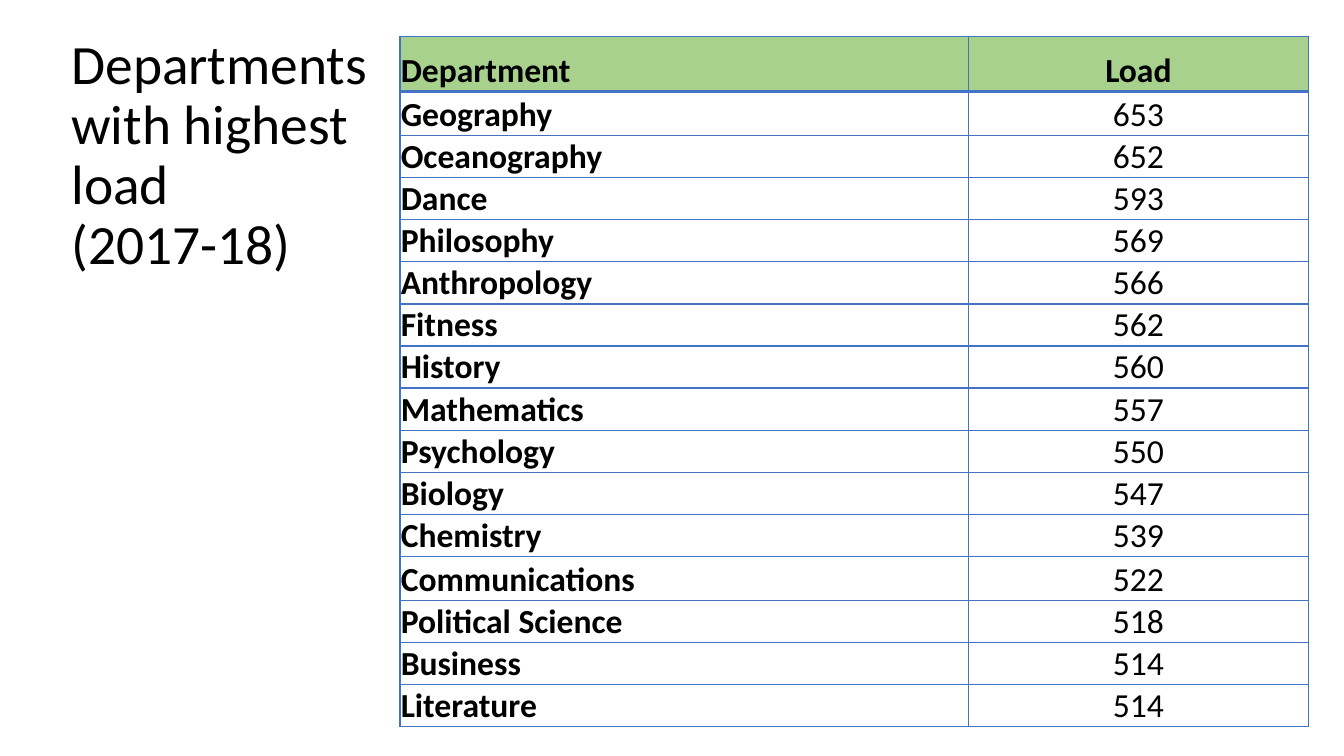
"""Build a slide that ranks departments by load in a bordered table."""
from dataclasses import dataclass
from typing import NamedTuple

from lxml.etree import SubElement
from pptx import Presentation
from pptx.dml.color import RGBColor
from pptx.enum.text import MSO_ANCHOR, PP_ALIGN
from pptx.oxml.ns import qn
from pptx.util import Cm, Pt


@dataclass(frozen=True)
class Theme:
    font: str = "Calibri"
    text: str = "000000"
    header: str = "A9D18E"
    border: str = "4472C4"
    title_size: float = 39.6
    cell_size: float = 24
    border_width: float = 1
    header_rule: float = 2


class Row(NamedTuple):
    department: str
    load: str
    height: float = 1.06


THEME = Theme()
TITLE = "Departments with highest load\v(2017-18)"
COLUMN_WIDTHS = (14.33, 8.56)
ROWS = (
    Row("Department", "Load", 1.39),
    Row("Geography", "653", 1.11),
    Row("Oceanography", "652"),
    Row("Dance", "593"),
    Row("Philosophy", "569"),
    Row("Anthropology", "566"),
    Row("Fitness", "562"),
    Row("History", "560"),
    Row("Mathematics", "557"),
    Row("Psychology", "550"),
    Row("Biology", "547"),
    Row("Chemistry", "539"),
    Row("Communications", "522", 1.11),
    Row("Political Science", "518"),
    Row("Business", "514"),
    Row("Literature", "514"),
)


def style_paragraph(p, size: float, bold: bool = False) -> None:
    p.font.name = THEME.font
    p.font.size = Pt(size)
    p.font.bold = bold
    p.font.color.rgb = RGBColor.from_string(THEME.text)


def add_title(s) -> None:
    sp = s.shapes.add_textbox(Cm(1.55), Cm(2.11), Cm(8.33), Cm(3.68))
    tf = sp.text_frame
    tf.word_wrap = True
    tf.vertical_anchor = MSO_ANCHOR.MIDDLE
    p = tf.paragraphs[0]
    p.text = TITLE
    p.line_spacing = 0.9
    style_paragraph(p, THEME.title_size)


def set_borders(cell, top: float, bottom: float) -> None:
    tc_pr = cell._tc.get_or_add_tcPr()
    widths = {"L": THEME.border_width, "R": THEME.border_width, "T": top, "B": bottom}
    for side, width in widths.items():
        ln = SubElement(tc_pr, qn(f"a:ln{side}"), w=str(Pt(width)))
        fill = SubElement(ln, qn("a:solidFill"))
        SubElement(fill, qn("a:srgbClr"), val=THEME.border)


def fill_cell(cell, text: str, row: int, col: int) -> None:
    is_header = row == 0
    set_borders(
        cell,
        top=THEME.header_rule if row == 1 else THEME.border_width,
        bottom=THEME.header_rule if is_header else THEME.border_width,
    )
    if is_header:
        cell.fill.solid()
        cell.fill.fore_color.rgb = RGBColor.from_string(THEME.header)
    else:
        cell.fill.background()
    cell.margin_left = cell.margin_right = cell.margin_top = Cm(0.02)
    cell.margin_bottom = 0
    cell.vertical_anchor = MSO_ANCHOR.BOTTOM
    p = cell.text_frame.paragraphs[0]
    p.text = text
    p.alignment = PP_ALIGN.CENTER if col else PP_ALIGN.LEFT
    style_paragraph(p, THEME.cell_size, bold=is_header or col == 0)


def add_load_table(s) -> None:
    width = Cm(sum(COLUMN_WIDTHS))
    height = Cm(sum(row.height for row in ROWS))
    table = s.shapes.add_table(
        len(ROWS), len(COLUMN_WIDTHS), Cm(10.08), Cm(0.92), width, height
    ).table
    table.horz_banding = False
    for column, column_width in zip(table.columns, COLUMN_WIDTHS):
        column.width = Cm(column_width)
    for i, row in enumerate(ROWS):
        table.rows[i].height = Cm(row.height)
        for j, text in enumerate((row.department, row.load)):
            fill_cell(table.cell(i, j), text, i, j)


def main() -> None:
    prs = Presentation()
    prs.slide_width, prs.slide_height = Cm(33.87), Cm(19.05)
    s = prs.slides.add_slide(prs.slide_layouts[6])
    add_title(s)
    add_load_table(s)
    prs.save("out.pptx")


if __name__ == "__main__":
    main()
